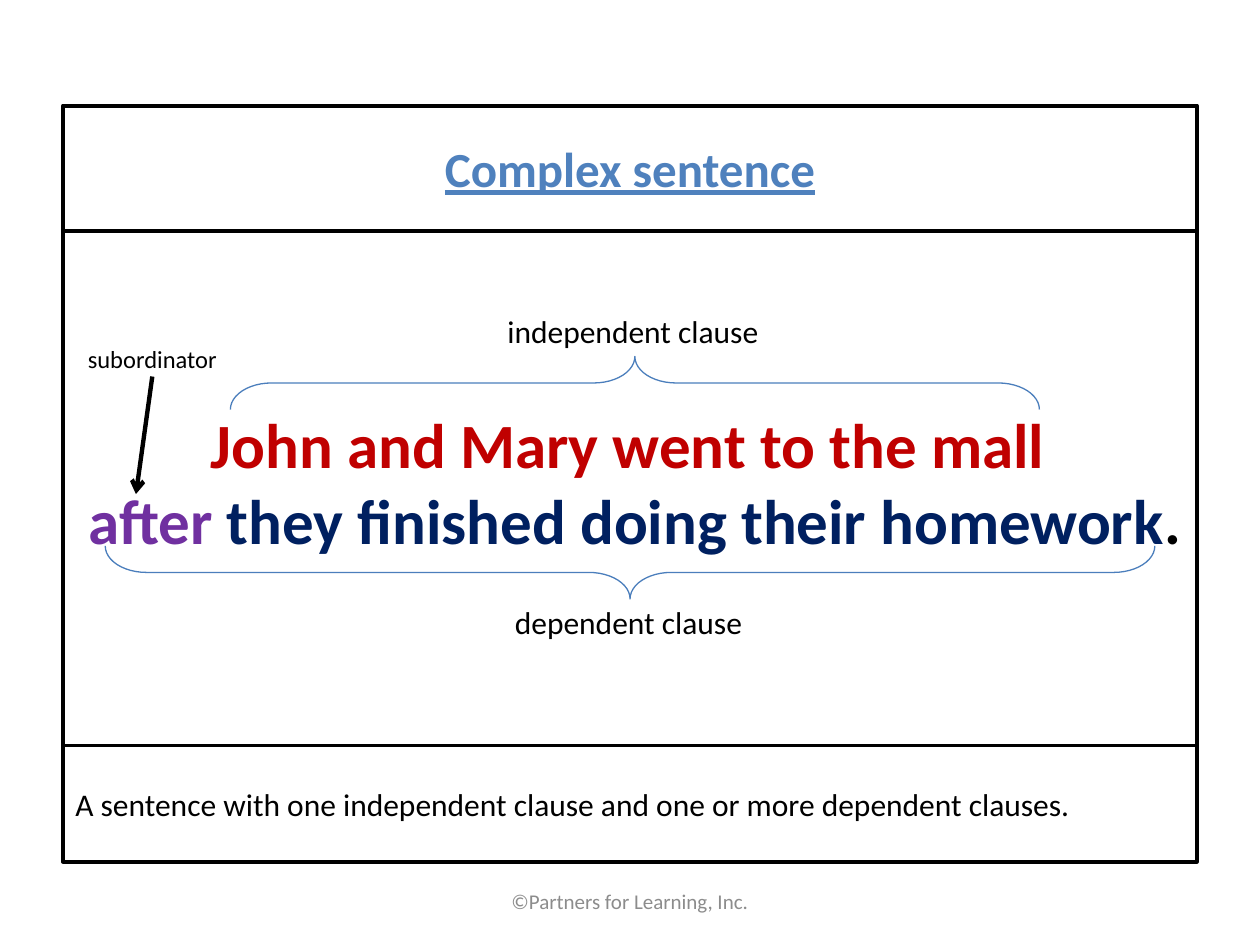
"""Builds a slide that labels the clauses of a complex sentence."""
from lxml import etree
from pptx import Presentation
from pptx import util as u
from pptx.dml.color import RGBColor
from pptx.enum import shapes, text
from pptx.oxml import ns

COLOURS = {
    "black": "000000",
    "title": "4F81BD",
    "brace": "4B7EBC",
    "independent": "C00000",
    "subordinator": "7030A0",
    "dependent": "002060",
    "credit": "8C8C8C",
}
FONT = "Calibri"
LEFT, WIDTH = 1.27, 22.86
HEADER_TOP, DIAGRAM_TOP, DEFINITION_TOP, BOTTOM = 2.13, 4.65, 15.03, 17.37
BRACE_DEPTH = 1.07


def colour(name):
    """Return the named colour."""
    return RGBColor.from_string(COLOURS[name])


def lengths(*values):
    """Convert centimetres to slide units."""
    return [u.Cm(value) for value in values]


def style(paragraph, size, name="black", bold=False, align=text.PP_ALIGN.LEFT):
    """Set the font and alignment of a paragraph."""
    paragraph.alignment = align
    font = paragraph.font
    font.name, font.size, font.bold = FONT, u.Pt(size), bold
    font.color.rgb = colour(name)


def add_label(slide, box, words, size, name="black", wrap=False,
              align=text.PP_ALIGN.LEFT, anchor=text.MSO_ANCHOR.TOP):
    """Add a text box with one paragraph."""
    frame = slide.shapes.add_textbox(*lengths(*box)).text_frame
    frame.word_wrap, frame.vertical_anchor = wrap, anchor
    frame.text = words
    style(frame.paragraphs[0], size, name, align=align)


def add_outline(slide, kind, box, name, weight):
    """Add an unfilled shape with a plain outline."""
    shape = slide.shapes.add_shape(kind, *lengths(*box))
    shape.shadow.inherit = False
    shape.fill.background()
    shape.line.color.rgb = colour(name)
    shape.line.width = u.Pt(weight)
    return shape


def add_panel(slide, box):
    """Add one bordered panel of the frame."""
    add_outline(slide, shapes.MSO_SHAPE.RECTANGLE, box, "black", 2.25)


def add_brace(slide, centre_x, centre_y, length, rotation):
    """Add a brace lying on its side around a centre point."""
    box = (centre_x - BRACE_DEPTH / 2, centre_y - length / 2, BRACE_DEPTH, length)
    brace = add_outline(slide, shapes.MSO_SHAPE.RIGHT_BRACE, box, "brace", 0.75)
    brace.adjustments[0] = 0.774
    brace.rotation = rotation


def add_arrow(slide, start, end):
    """Add a straight line with an open arrowhead at its end."""
    arrow = slide.shapes.add_connector(
        shapes.MSO_CONNECTOR.STRAIGHT, *lengths(*start, *end))
    arrow.line.color.rgb = colour("black")
    arrow.line.width = u.Pt(2.5)
    etree.SubElement(arrow.line._get_or_add_ln(), ns.qn("a:tailEnd"), type="arrow")
    etree.SubElement(arrow._element.spPr, ns.qn("a:effectLst"))


def add_sentence(slide, box):
    """Add the example sentence with its parts in colour."""
    frame = slide.shapes.add_textbox(*lengths(*box)).text_frame
    frame.word_wrap = True
    lines = [
        [("John and Mary went to the mall ", "independent")],
        [("after ", "subordinator"),
         ("they finished doing their homework", "dependent"), (".", "black")],
    ]
    for index, parts in enumerate(lines):
        paragraph = frame.add_paragraph() if index else frame.paragraphs[0]
        style(paragraph, 36, bold=True, align=text.PP_ALIGN.CENTER)
        for words, name in parts:
            run = paragraph.add_run()
            run.text = words
            run.font.color.rgb = colour(name)


def add_header(slide, box):
    """Add the top panel with the slide title."""
    add_panel(slide, box)
    title = slide.shapes.title
    title.left, title.top, title.width, title.height = lengths(*box)
    frame = title.text_frame
    frame.vertical_anchor = text.MSO_ANCHOR.MIDDLE
    frame.text = "Complex sentence"
    paragraph = frame.paragraphs[0]
    style(paragraph, 28, "title", True, text.PP_ALIGN.CENTER)
    paragraph.font.underline = True


def add_diagram(slide, box):
    """Add the middle panel with the labelled sentence."""
    add_panel(slide, box)
    left, top = box[:2]
    add_sentence(slide, (left, top + 3.4, 23.06, 3.33))
    add_brace(slide, left + 11.53, top + 3.07, 16.31, 270)
    add_brace(slide, left + 11.43, top + 6.89, 21.16, 90)
    labels = [
        ("independent clause", 18, 8.71, 1.52, 5.66, 1.02),
        ("dependent clause", 18, 8.86, 7.39, 5.16, 1.02),
        ("subordinator", 14, 0.25, 2.16, 3.15, 0.86),
    ]
    for words, size, x, y, width, height in labels:
        add_label(slide, (left + x, top + y, width, height), words, size)
    add_arrow(slide, (left + 1.8, top + 2.94), (left + 1.47, top + 5.31))


def add_definition(slide, box):
    """Add the bottom panel with the definition."""
    add_panel(slide, box)
    add_label(
        slide, box,
        "A sentence with one independent clause and one or more dependent clauses.",
        18, wrap=True, anchor=text.MSO_ANCHOR.MIDDLE)


def add_credit(slide, box):
    """Add the copyright line."""
    add_label(slide, box, "©Partners for Learning, Inc.", 12, "credit", True,
              text.PP_ALIGN.CENTER, text.MSO_ANCHOR.MIDDLE)


def main():
    """Build and save the presentation."""
    presentation = Presentation()
    presentation.slide_width, presentation.slide_height = lengths(25.4, 19.05)
    slide = presentation.slides.add_slide(presentation.slide_layouts[5])
    add_header(slide, (LEFT, HEADER_TOP, WIDTH, DIAGRAM_TOP - HEADER_TOP))
    add_diagram(slide, (LEFT, DIAGRAM_TOP, WIDTH, DEFINITION_TOP - DIAGRAM_TOP))
    add_definition(slide, (LEFT, DEFINITION_TOP, WIDTH, BOTTOM - DEFINITION_TOP))
    add_credit(slide, (8.68, 17.65, 8.04, 1.02))
    presentation.save("out.pptx")


if __name__ == "__main__":
    main()
